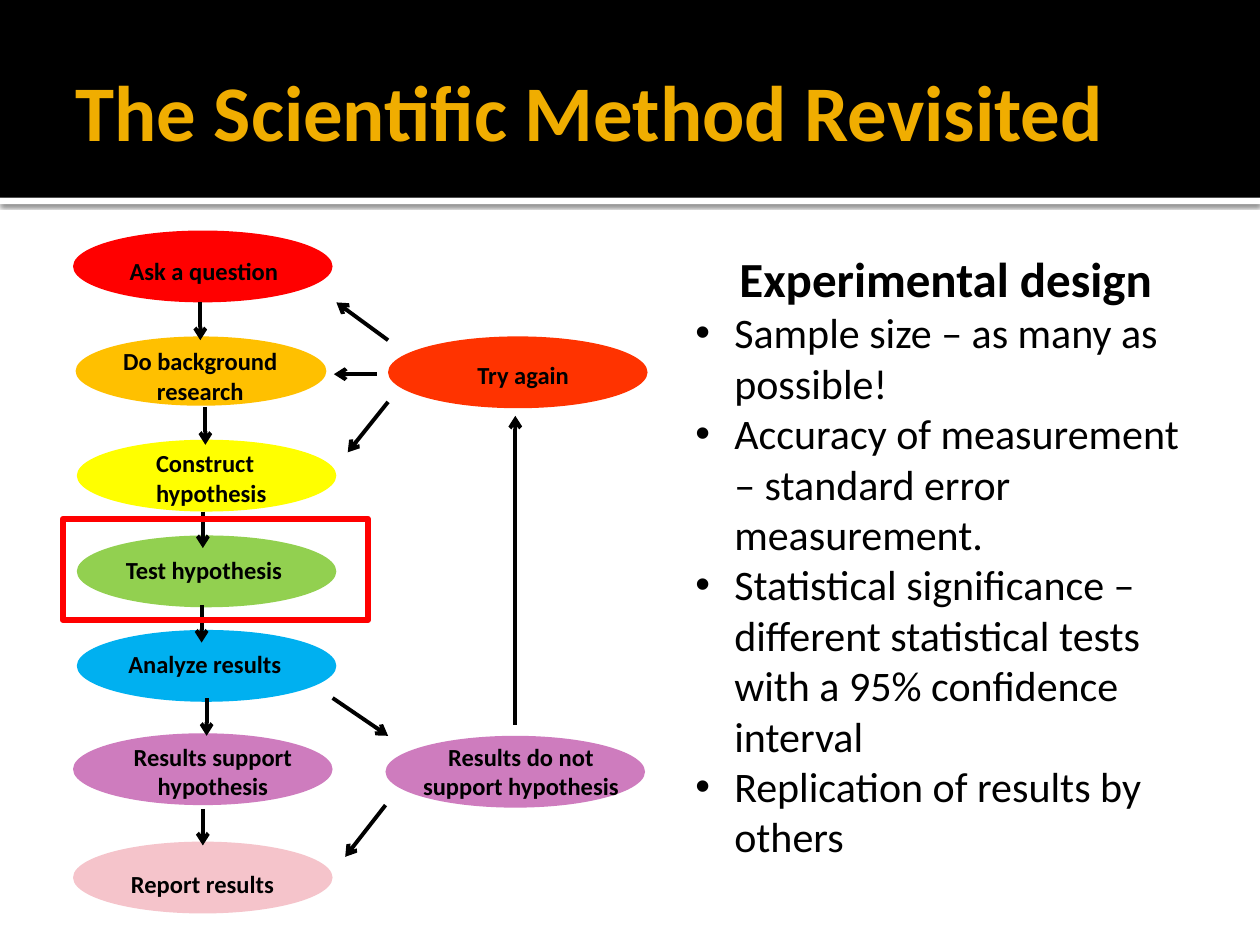
from lxml import etree
from pptx import Presentation
from pptx.dml.color import RGBColor
from pptx.enum.shapes import MSO_CONNECTOR, MSO_SHAPE
from pptx.enum.text import MSO_ANCHOR, PP_ALIGN
from pptx.oxml import parse_xml
from pptx.oxml.ns import qn
from pptx.util import Inches, Pt

STRAIGHT = MSO_CONNECTOR.STRAIGHT
RECTANGLE, OVAL = MSO_SHAPE.RECTANGLE, MSO_SHAPE.OVAL
MIDDLE = MSO_ANCHOR.MIDDLE
LEFT, CENTER = PP_ALIGN.LEFT, PP_ALIGN.CENTER
BLACK = RGBColor(0x00, 0x00, 0x00)
WHITE = RGBColor(0xFF, 0xFF, 0xFF)
GOLD = RGBColor(0xF0, 0xAD, 0x00)
RED = RGBColor(0xFF, 0x00, 0x00)
AMBER = RGBColor(0xFF, 0xC0, 0x00)
YELLOW = RGBColor(0xFF, 0xFF, 0x00)
GREEN = RGBColor(0x92, 0xD0, 0x50)
BLUE = RGBColor(0x00, 0xB0, 0xF0)
ORCHID = RGBColor(0xCE, 0x7C, 0xBE)
ORANGE = RGBColor(0xFF, 0x33, 0x00)
PINK = RGBColor(0xF5, 0xC4, 0xCB)
FONT = "Calibri"
SHADOW = (
    '<a:effectLst xmlns:a="http://schemas.openxmlformats.org/drawingml/2006/main">'
    '<a:outerShdw blurRad="31750" dist="10160" dir="5400000" rotWithShape="0">'
    '<a:srgbClr val="000000"><a:alpha val="60000"/></a:srgbClr>'
    '</a:outerShdw></a:effectLst>'
)

deck = Presentation()
deck.slide_width, deck.slide_height = Inches(10), Inches(7.5)
page = deck.slides.add_slide(deck.slide_layouts[6])


def add_filled(kind, left, top, width, height, color):
    shape = page.shapes.add_shape(
        kind, Inches(left), Inches(top), Inches(width), Inches(height))
    shape.shadow.inherit = False
    shape.fill.solid()
    shape.fill.fore_color.rgb = color
    shape.line.fill.background()
    return shape


def add_text(left, top, width, height, lines, size, color, bold, align, wrap):
    box = page.shapes.add_textbox(
        Inches(left), Inches(top), Inches(width), Inches(height))
    frame = box.text_frame
    frame.word_wrap = wrap
    frame.text = "\n".join(lines)
    for para in frame.paragraphs:
        para.alignment = align
        para.font.name = FONT
        para.font.size = Pt(size)
        para.font.bold = bold
        para.font.color.rgb = color
    return frame


band = add_filled(RECTANGLE, 0, 1.57, 10, 0.05, WHITE)
properties = band.element.spPr
properties.replace(properties.find(qn("a:effectLst")), parse_xml(SHADOW))
add_filled(RECTANGLE, 0, 0, 10, 1.57, BLACK)
title = add_text(0.5, 0.25, 9, 1.25, ["The Scientific Method Revisited"],
                 45, GOLD, True, LEFT, True)
title.vertical_anchor = MIDDLE
title.margin_right = Inches(0.05)

steps = [
    (0.58, 1.83, 2.06, 0.57, RED, 0.93, 1.98, 1.44, LEFT, ["Ask a question"]),
    (0.61, 5, 2.06, 0.57, BLUE, 0.92, 5.1, 1.49, LEFT, ["Analyze results"]),
    (0.6, 2.67, 1.99, 0.55, AMBER, 0.79, 2.7, 1.6, CENTER, ["Do background", "research"]),
    (0.61, 3.49, 2.06, 0.57, YELLOW, 1.14, 3.51, 1.13, LEFT, ["Construct", "hypothesis"]),
    (0.61, 4.25, 2.06, 0.57, GREEN, 0.9, 4.36, 1.53, LEFT, ["Test hypothesis"]),
    (0.58, 5.82, 2.06, 0.57, ORCHID, 0.94, 5.84, 1.5, CENTER, ["Results support", "hypothesis"]),
    (3.08, 2.67, 2.06, 0.57, ORANGE, 3.69, 2.81, 0.98, LEFT, ["Try again"]),
    (0.58, 6.68, 2.06, 0.57, PINK, 0.94, 6.85, 1.38, LEFT, ["Report results"]),
    (3.06, 5.84, 2.06, 0.57, ORCHID, 3.22, 5.84, 1.83, CENTER,
     ["Results do not", "support hypothesis"]),
]
for left, top, width, height, color, text_left, text_top, text_width, align, lines in steps:
    add_filled(OVAL, left, top, width, height, color)
    add_text(text_left, text_top, text_width, 0.11 + 0.23 * len(lines),
             lines, 14, BLACK, True, align, False)

arrows = [
    (1.59, 2.4, 1.59, 2.7),
    (1.63, 3.23, 1.63, 3.53),
    (1.61, 4.06, 1.61, 4.35),
    (1.6, 4.8, 1.6, 5.1),
    (1.64, 5.54, 1.64, 5.84),
    (1.61, 6.42, 1.61, 6.71),
    (2.64, 5.54, 3.08, 5.84),
    (4.09, 5.75, 4.09, 3.3),
    (3.08, 2.7, 2.67, 2.4),
    (3.08, 3.19, 2.76, 3.59),
    (2.99, 2.97, 2.65, 2.97),
    (3.06, 6.39, 2.74, 6.8),
]
for ends in arrows:
    arrow = page.shapes.add_connector(STRAIGHT, *[Inches(end) for end in ends])
    arrow.line.color.rgb = BLACK
    arrow.line.width = Pt(2.25)
    etree.SubElement(arrow.line._get_or_add_ln(), qn("a:tailEnd"), type="arrow")
    etree.SubElement(arrow._element.spPr, qn("a:effectLst"))

highlight = add_filled(RECTANGLE, 0.5, 4.12, 2.42, 0.8, WHITE)
highlight.fill.background()
highlight.line.color.rgb = RED
highlight.line.width = Pt(3.78)

design = add_text(5.42, 1.92, 4.17, 5.02, [
    "Experimental design",
    "Sample size – as many as possible!",
    "Accuracy of measurement – standard error measurement.",
    "Statistical significance – different statistical tests with a 95% confidence interval",
    "Replication of results by others",
], 24, BLACK, False, LEFT, True)
heading, *points = design.paragraphs
heading.alignment = CENTER
heading.font.size = Pt(28)
heading.font.bold = True
for point in points:
    layout = point._p.get_or_add_pPr()
    layout.set("marL", str(Inches(0.31)))
    layout.set("indent", str(-Inches(0.31)))
    bullet_font = etree.Element(qn("a:buFont"), typeface="Arial")
    bullet = etree.Element(qn("a:buChar"), char="•")
    layout.insert(0, bullet_font)
    layout.insert(1, bullet)

deck.save("out.pptx")
